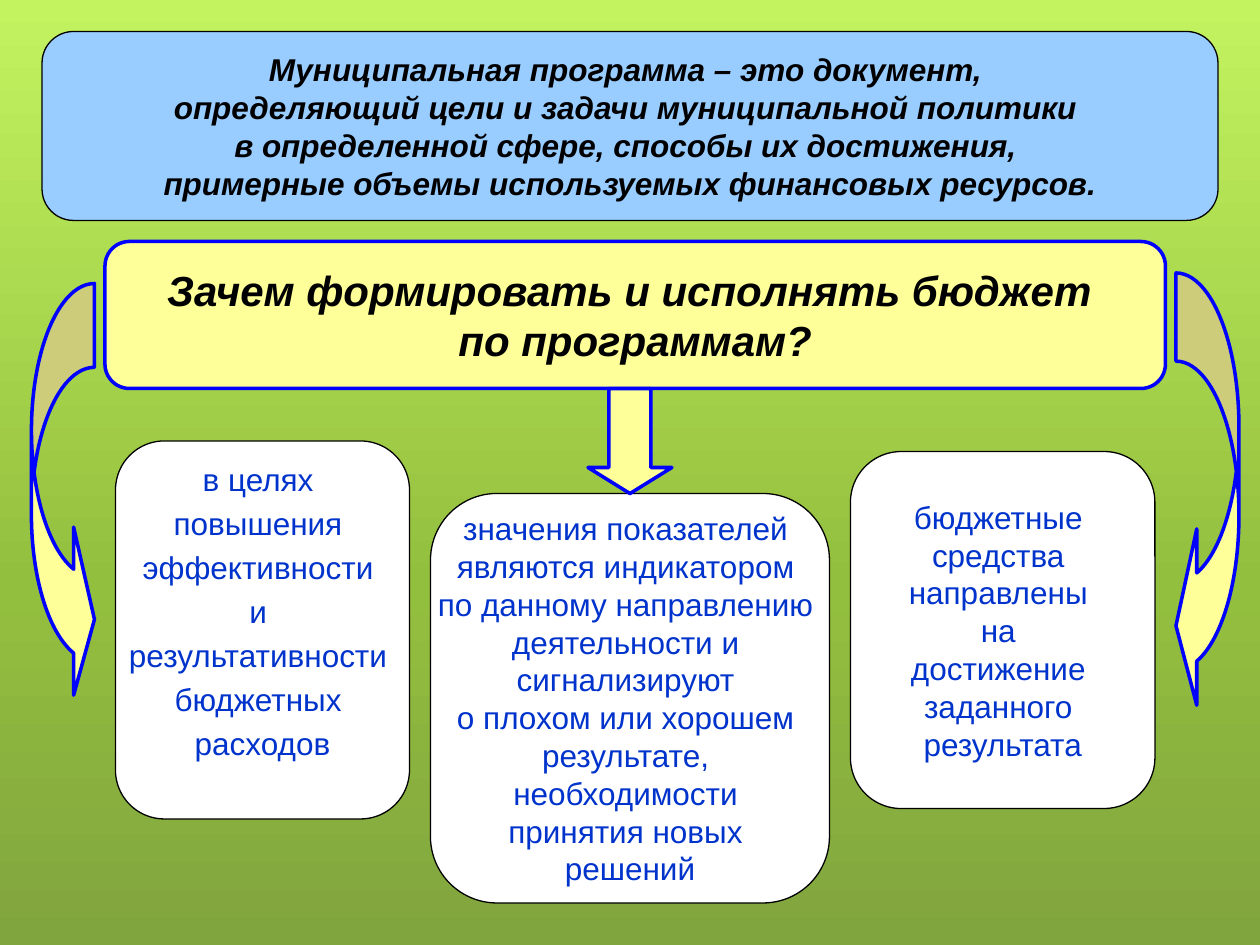
from copy import deepcopy
from dataclasses import dataclass

from pptx import Presentation
from pptx.dml.color import RGBColor
from pptx.enum.shapes import MSO_SHAPE
from pptx.enum.text import MSO_ANCHOR, PP_ALIGN
from pptx.oxml.ns import qn
from pptx.util import Emu, Pt

EMU_PER_PX = 7620  # 120 px to the inch


@dataclass(frozen=True)
class Theme:
    font: str = "Arial"
    body_size: int = 18
    question_size: int = 24
    black: str = "000000"
    text_blue: str = "0033CC"
    line_blue: str = "0000FF"
    sky: str = "99CCFF"
    yellow: str = "FFFF99"
    white: str = "FFFFFF"
    thin: float = 0.75
    thick: float = 2
    background: tuple = ((0, "C3F35F"), (0.62, "93BF3F"), (1, "81A53E"))


THEME = Theme()


@dataclass(frozen=True)
class Box:
    left: int
    top: int
    width: int
    height: int
    lines: tuple[str, ...]
    fill: str = THEME.white
    line: str = THEME.black
    line_width: float = THEME.thin
    size: int = THEME.body_size
    color: str = THEME.text_blue
    emphasis: bool = False
    space_before: float = 0
    bottom_inset: int = 6


@dataclass(frozen=True)
class Arrow:
    preset: MSO_SHAPE
    left: int
    top: int
    width: int
    height: int
    adjustments: tuple[float, ...]


BOXES = (
    Box(40, 30, 1120, 180,
        ("Муниципальная программа – это документ,",
         "определяющий цели и задачи муниципальной политики",
         "в определенной сфере, способы их достижения,",
         "примерные объемы используемых финансовых ресурсов."),
        fill=THEME.sky, color=THEME.black, emphasis=True),
    Box(100, 230, 1010, 140,
        ("Зачем формировать и исполнять бюджет", "по программам?"),
        fill=THEME.yellow, line=THEME.line_blue, line_width=THEME.thick,
        size=THEME.question_size, color=THEME.black, emphasis=True),
    Box(110, 420, 280, 360,
        ("в целях", "повышения", "эффективности", "и",
         "результативности", "бюджетных", "расходов"),
        space_before=3.6, bottom_inset=42),
    Box(410, 470, 380, 390,
        ("значения показателей", "являются индикатором",
         "по данному направлению", "деятельности и", "сигнализируют",
         "о плохом или хорошем", "результате,", "необходимости",
         "принятия новых", "решений")),
    Box(810, 430, 290, 340,
        ("бюджетные", "средства", "направлены", "на",
         "достижение", "заданного", "результата")),
)

ARROWS = (
    Arrow(MSO_SHAPE.CURVED_RIGHT_ARROW, 30, 270, 60, 400, (1.33, 2.67, 0.33)),
    Arrow(MSO_SHAPE.CURVED_LEFT_ARROW, 1120, 260, 60, 420, (1.4, 2.8, 0.33)),
    Arrow(MSO_SHAPE.DOWN_ARROW, 560, 370, 80, 100, (0.5, 0.31)),
)


def px(length: int) -> Emu:
    return Emu(length * EMU_PER_PX)


def set_all(target, values: dict) -> None:
    for name, value in values.items():
        setattr(target, name, value)


def paint_background(slide) -> None:
    fill = slide.background.fill
    fill.gradient()
    fill.gradient_angle = 270
    first_stop = next(slide.element.iter(qn("a:gs")))
    first_stop.addnext(deepcopy(first_stop))
    for stop, (position, color) in zip(fill.gradient_stops, THEME.background):
        stop.position = position
        stop.color.rgb = RGBColor.from_string(color)


def add_styled_shape(slide, preset: MSO_SHAPE, item: Box | Arrow,
                     fill: str, line: str, line_width: float):
    shape = slide.shapes.add_shape(
        preset, px(item.left), px(item.top), px(item.width), px(item.height))
    shape.shadow.inherit = False
    shape.fill.solid()
    shape.fill.fore_color.rgb = RGBColor.from_string(fill)
    shape.line.color.rgb = RGBColor.from_string(line)
    shape.line.width = Pt(line_width)
    return shape


def add_box(slide, box: Box) -> None:
    shape = add_styled_shape(slide, MSO_SHAPE.ROUNDED_RECTANGLE, box,
                             box.fill, box.line, box.line_width)
    frame = shape.text_frame
    set_all(frame, {"word_wrap": False, "vertical_anchor": MSO_ANCHOR.MIDDLE,
                    "margin_bottom": px(box.bottom_inset)})
    # Every line but the last keeps the space between it and the next word.
    frame.text = " \n".join(box.lines)
    for paragraph in frame.paragraphs:
        set_all(paragraph, {"alignment": PP_ALIGN.CENTER,
                            "space_before": Pt(box.space_before)})
        font = paragraph.runs[0].font
        set_all(font, {"name": THEME.font, "size": Pt(box.size),
                       "bold": box.emphasis, "italic": box.emphasis})
        font.color.rgb = RGBColor.from_string(box.color)


def add_arrow(slide, arrow: Arrow) -> None:
    shape = add_styled_shape(slide, arrow.preset, arrow,
                             THEME.yellow, THEME.line_blue, THEME.thick)
    for index, value in enumerate(arrow.adjustments):
        shape.adjustments[index] = value


def main() -> None:
    presentation = Presentation()
    set_all(presentation, {"slide_width": px(1200), "slide_height": px(900)})
    slide = presentation.slides.add_slide(presentation.slide_layouts[6])
    paint_background(slide)
    for box in BOXES:
        add_box(slide, box)
    for arrow in ARROWS:
        add_arrow(slide, arrow)
    presentation.save("out.pptx")


if __name__ == "__main__":
    main()
